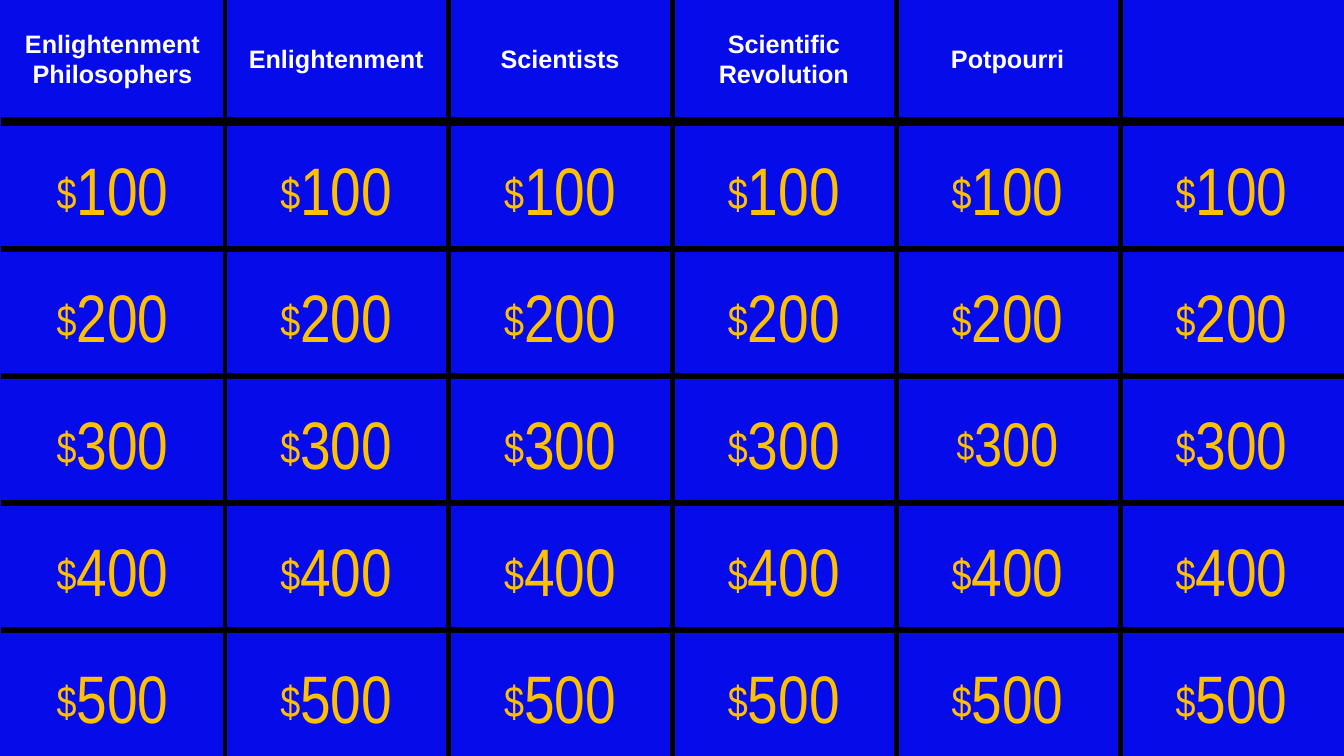
from dataclasses import dataclass

from lxml import etree
from pptx import Presentation
from pptx import util as u
from pptx.dml.color import RGBColor
from pptx.enum import shapes, text
from pptx.oxml import ns


@dataclass(frozen=True)
class Theme:
    blue: RGBColor = RGBColor.from_string("060CE9")
    gold: RGBColor = RGBColor.from_string("FFC000")
    white: RGBColor = RGBColor.from_string("FFFFFF")
    black: RGBColor = RGBColor.from_string("000000")
    heading_font: str = "Arial"
    price_font: str = "Arial Narrow"
    heading_size: float = 18
    dollar_size: float = 54
    amount_size: float = 48
    small_dollar_size: float = 48
    small_amount_size: float = 44
    header_rule: float = 6.5
    row_rule: float = 4
    column_rule: float = 3.5


THEME = Theme()
CATEGORIES = ["Enlightenment Philosophers", "Enlightenment", "Scientists",
              "Scientific Revolution", "Potpourri", ""]
AMOUNTS = [100, 200, 300, 400, 500]
SMALL_PRICE = ("Potpourri", 300)
BOARD = (0.03, -0.13, 33.84, 19.2)
GUTTER = 0.03
OVERHANG = 0.25


def add_cell(slide, left, top, width, height):
    """Add a blue cell and return its centred paragraph."""
    cell = slide.shapes.add_shape(
        shapes.MSO_SHAPE.RECTANGLE, u.Cm(left), u.Cm(top), u.Cm(width), u.Cm(height))
    cell.shadow.inherit = False
    cell.fill.solid()
    cell.fill.fore_color.rgb = THEME.blue
    cell.line.fill.background()
    frame = cell.text_frame
    frame.word_wrap = True
    frame.vertical_anchor = text.MSO_ANCHOR.MIDDLE
    paragraph = frame.paragraphs[0]
    paragraph.alignment = text.PP_ALIGN.CENTER
    return paragraph


def add_run(paragraph, words, font, size, color, bold=False):
    run = paragraph.add_run()
    run.text = words
    run.font.name = font
    run.font.size = u.Pt(size)
    run.font.color.rgb = color
    run.font.bold = bold
    return run


def add_heading(slide, category, *box):
    paragraph = add_cell(slide, *box)
    if category:
        add_run(paragraph, category, THEME.heading_font, THEME.heading_size,
                THEME.white, bold=True)


def add_price(slide, amount, small, *box):
    paragraph = add_cell(slide, *box)
    dollar_size = THEME.small_dollar_size if small else THEME.dollar_size
    amount_size = THEME.small_amount_size if small else THEME.amount_size
    dollar = add_run(paragraph, "$", THEME.price_font, dollar_size, THEME.gold)
    # Raise the dollar sign by 8 percent
    dollar._r.get_or_add_rPr().set("baseline", "8000")
    add_run(paragraph, str(amount), THEME.price_font, amount_size, THEME.gold)


def add_rule(slide, x1, y1, x2, y2, weight):
    rule = slide.shapes.add_connector(
        shapes.MSO_CONNECTOR.STRAIGHT, u.Cm(x1), u.Cm(y1), u.Cm(x2), u.Cm(y2))
    rule.line.color.rgb = THEME.black
    rule.line.width = u.Pt(weight)
    etree.SubElement(rule._element.spPr, ns.qn("a:effectLst"))


def add_cells(slide, left, top, column_step, row_step):
    for column, category in enumerate(CATEGORIES):
        x = left + column * column_step
        size = (column_step - GUTTER, row_step)
        add_heading(slide, category, x, top, *size)
        for row, amount in enumerate(AMOUNTS, start=1):
            small = (category, amount) == SMALL_PRICE
            add_price(slide, amount, small, x, top + row * row_step, *size)


def add_rules(slide, left, top, width, height, column_step, row_step):
    for row in range(1, len(AMOUNTS) + 1):
        y = top + row * row_step
        weight = THEME.header_rule if row == 1 else THEME.row_rule
        add_rule(slide, left, y, left + width + OVERHANG, y, weight)
    for column in range(1, len(CATEGORIES)):
        x = left + column * column_step
        add_rule(slide, x, top, x, top + height + OVERHANG, THEME.column_rule)


def add_board(slide, left, top, width, height):
    column_step = width / len(CATEGORIES)
    row_step = height / (len(AMOUNTS) + 1)
    add_cells(slide, left, top, column_step, row_step)
    add_rules(slide, left, top, width, height, column_step, row_step)


def main():
    deck = Presentation()
    deck.slide_width, deck.slide_height = u.Cm(33.87), u.Cm(19.05)
    slide = deck.slides.add_slide(deck.slide_layouts[6])
    slide.background.fill.solid()
    slide.background.fill.fore_color.rgb = THEME.blue
    add_board(slide, *BOARD)
    deck.save("out.pptx")


if __name__ == "__main__":
    main()
